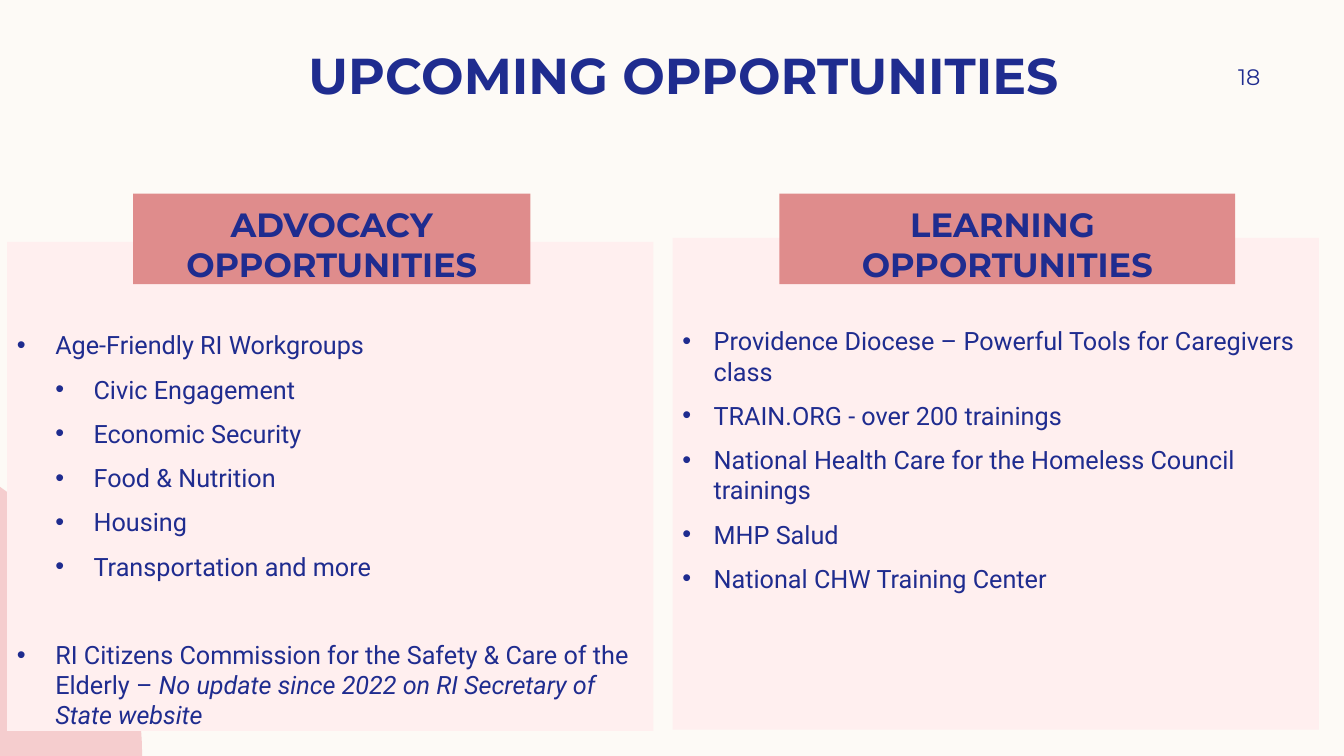
import dataclasses
import typing

import pptx
import pptx.dml.color
import pptx.enum.shapes
import pptx.enum.text
import pptx.oxml.ns
import pptx.util
from lxml import etree

Inches = pptx.util.Inches
Pt = pptx.util.Pt
RGB = pptx.dml.color.RGBColor.from_string
Align = pptx.enum.text.PP_ALIGN
Anchor = pptx.enum.text.MSO_ANCHOR


@dataclasses.dataclass(frozen=True)
class Theme:
    paper: str = "FDFAF6"
    corner: str = "F5CDCE"
    panel: str = "FFEFEF"
    banner: str = "DF8C8C"
    ink: str = "1F2C8F"
    head: str = "Montserrat"
    body: str = "Roboto"
    title: int = 36
    label: int = 24
    text: int = 18
    page: int = 16


class Box(typing.NamedTuple):
    left: float
    top: float
    width: float
    height: float


class Item(typing.NamedTuple):
    text: str
    level: int = 0
    before: float = 10
    note: str = ""


class Panel(typing.NamedTuple):
    box: Box
    indent: float
    items: list[Item]


class Label(typing.NamedTuple):
    box: Box
    lines: list[str]
    size: int
    fill: str | None = None
    bold: bool = True
    align: Align = Align.CENTER
    anchor: Anchor = Anchor.BOTTOM
    inset: float = 0.1


THEME = Theme()

TOPICS = ["Civic Engagement", "Economic Security", "Food & Nutrition",
          "Housing", "Transportation and more"]
COURSES = ["TRAIN.ORG - over 200 trainings",
           "National Health Care for the Homeless Council trainings",
           "MHP Salud", "National CHW Training Center"]

PANELS = [
    Panel(Box(6.67, 2.36, 6.41, 4.88), 0.31, [
        Item("Providence Diocese – Powerful Tools for Caregivers class", before=0),
        *[Item(course) for course in COURSES],
    ]),
    Panel(Box(0.07, 2.4, 6.41, 4.85), 0.38, [
        Item("Age-Friendly RI Workgroups", before=0),
        *[Item(topic, level=1) for topic in TOPICS],
        Item("RI Citizens Commission for the Safety & Care of the Elderly – ",
             before=41.5, note="No update since 2022 on RI Secretary of State website"),
    ]),
]

LABELS = [
    Label(Box(1.45, -0.05, 10.8, 1.09), ["UPCOMING OPPORTUNITIES "], THEME.title),
    Label(Box(11.42, 0.5, 1.08, 0.52), ["18"], THEME.page, bold=False,
          align=Align.RIGHT, anchor=Anchor.MIDDLE, inset=0),
    Label(Box(1.32, 1.92, 3.94, 0.9), ["ADVOCACY OPPORTUNITIES"],
          THEME.label, THEME.banner),
    Label(Box(7.73, 1.92, 4.52, 0.9), ["LEARNING ", "OPPORTUNITIES"],
          THEME.label, THEME.banner),
]


def apply(target: typing.Any, values: dict[str, typing.Any]) -> None:
    for name, value in values.items():
        setattr(target, name, value)


def paint(shape: typing.Any, color: str) -> None:
    shape.shadow.inherit = False
    shape.fill.solid()
    shape.fill.fore_color.rgb = RGB(color)
    shape.line.fill.background()


def add_box(slide: typing.Any, box: Box, fill: str | None) -> typing.Any:
    place = [Inches(side) for side in box]
    if fill is None:
        return slide.shapes.add_textbox(*place)
    shape = slide.shapes.add_shape(pptx.enum.shapes.MSO_SHAPE.RECTANGLE, *place)
    paint(shape, fill)
    return shape


def set_frame(frame: typing.Any, anchor: Anchor, top: float = 0,
              right: float = 0.1) -> None:
    apply(frame, {
        "word_wrap": True, "vertical_anchor": anchor,
        "margin_left": Inches(0.1), "margin_right": Inches(right),
        "margin_top": Inches(top), "margin_bottom": 0,
    })


def add_run(para: typing.Any, text: str, font: dict[str, typing.Any]) -> None:
    run = para.add_run()
    run.text = text
    apply(run.font, font)
    run.font.color.rgb = RGB(THEME.ink)


def next_para(frame: typing.Any, index: int) -> typing.Any:
    return frame.add_paragraph() if index else frame.paragraphs[0]


def set_bullet(para: typing.Any, left: float, hang: float) -> None:
    props = para._p.get_or_add_pPr()
    props.set("marL", str(Inches(left)))
    props.set("indent", str(-Inches(hang)))
    tag = pptx.oxml.ns.qn
    etree.SubElement(props, tag("a:buFont")).set("typeface", "Arial")
    etree.SubElement(props, tag("a:buChar")).set("char", "•")


def draw_label(slide: typing.Any, label: Label) -> None:
    frame = add_box(slide, label.box, label.fill).text_frame
    set_frame(frame, label.anchor, right=label.inset)
    font = {"name": THEME.head, "size": Pt(label.size), "bold": label.bold}
    for index, line in enumerate(label.lines):
        para = next_para(frame, index)
        para.alignment = label.align
        add_run(para, line, font)


def draw_panel(slide: typing.Any, panel: Panel) -> None:
    frame = add_box(slide, panel.box, THEME.panel).text_frame
    set_frame(frame, Anchor.TOP, top=0.87)
    font = {"name": THEME.body, "size": Pt(THEME.text)}
    for index, item in enumerate(panel.items):
        para = next_para(frame, index)
        set_bullet(para, panel.indent * (item.level + 1), panel.indent)
        apply(para, {"alignment": Align.LEFT, "level": item.level,
                     "space_before": Pt(item.before)})
        add_run(para, item.text, font)
        if item.note:
            add_run(para, item.note, font | {"italic": True})


def draw_corner(slide: typing.Any) -> None:
    # Sample the curved edge as a cubic Bézier
    knots = [(0, 4.83), (0.85, 5.42), (1.41, 6.39), (1.41, 7.5)]
    steps = 24
    edge = []
    for step in range(steps + 1):
        t = step / steps
        rates = [(1 - t) ** 3, 3 * t * (1 - t) ** 2, 3 * t * t * (1 - t), t ** 3]
        edge.append(tuple(
            Inches(sum(rate * knot[axis] for rate, knot in zip(rates, knots)))
            for axis in (0, 1)))
    builder = slide.shapes.build_freeform(*edge[0])
    builder.add_line_segments(edge[1:] + [(0, Inches(7.5))], close=True)
    paint(builder.convert_to_shape(), THEME.corner)


def main() -> None:
    deck = pptx.Presentation()
    apply(deck, {"slide_width": Inches(13.33), "slide_height": Inches(7.5)})
    slide = deck.slides.add_slide(deck.slide_layouts[6])

    # Background and corner curve
    slide.background.fill.solid()
    slide.background.fill.fore_color.rgb = RGB(THEME.paper)
    draw_corner(slide)

    # Lists, then the title, page number and banners over them
    for panel in PANELS:
        draw_panel(slide, panel)
    for label in LABELS:
        draw_label(slide, label)

    deck.save("out.pptx")


if __name__ == "__main__":
    main()
